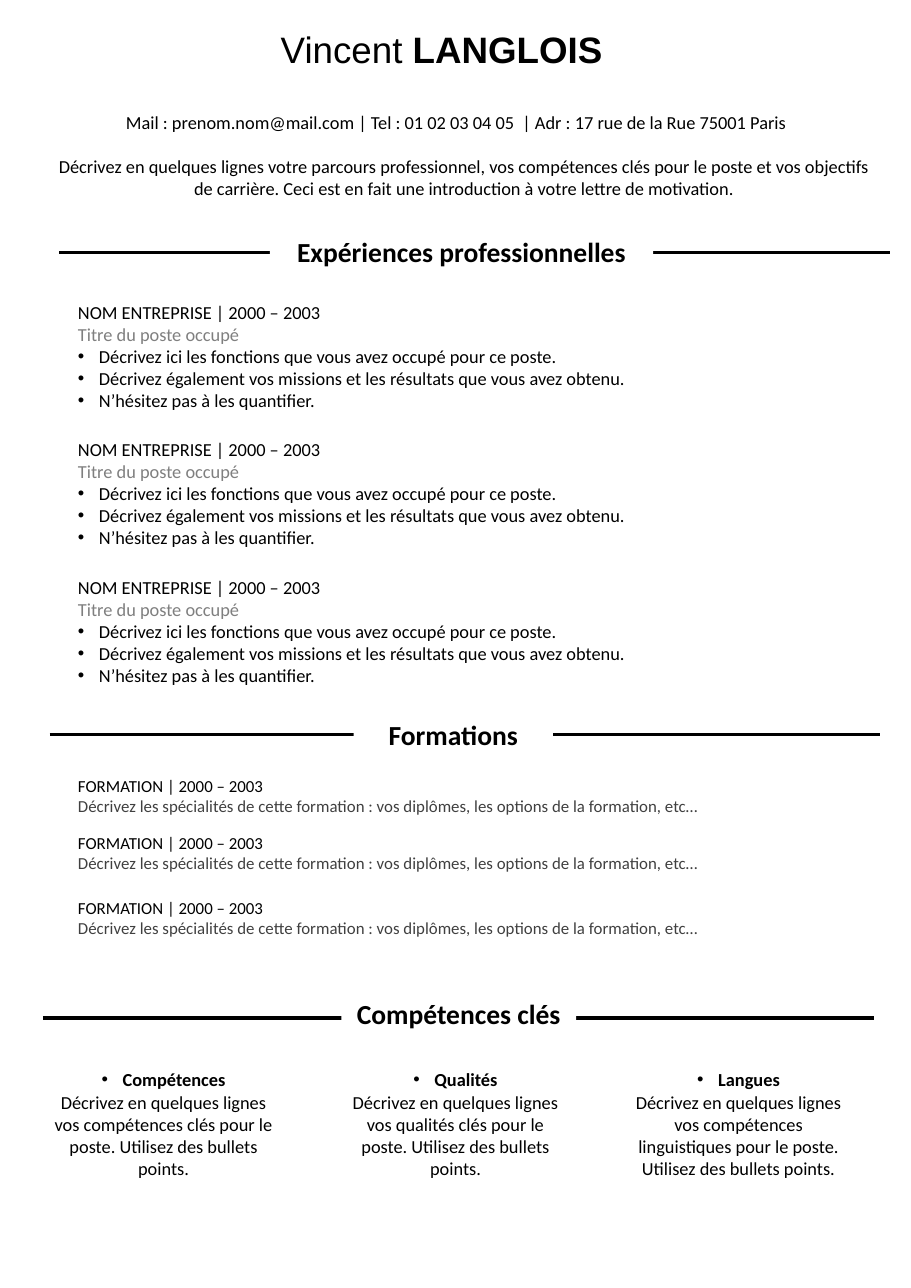
import pptx
import pptx.dml.color
import pptx.enum.shapes
import pptx.enum.text
import pptx.oxml
import pptx.oxml.ns
import pptx.util
from dataclasses import dataclass

PX = 9144  # 100 px to the inch
ALIGN = pptx.enum.text.PP_ALIGN
FIT = pptx.enum.text.MSO_AUTO_SIZE.SHAPE_TO_FIT_TEXT


@dataclass(frozen=True)
class Theme:
    ink: str = "000000"
    paper: str = "FFFFFF"
    grey: str = "7F7F7F"
    dark: str = "404040"
    body: str = "Calibri"
    head: str = "Arial"
    name: int = 24
    title: int = 18
    text: int = 12
    small: int = 11
    rule: int = 2
    indent: int = 19


T = Theme()


def px(n):
    return pptx.util.Emu(n * PX)


def rgb(code):
    return pptx.dml.color.RGBColor.from_string(code)


def add_run(para, text, size=T.text, color=T.ink, bold=False, face=T.body):
    run = para.add_run()
    run.text = text
    font = run.font
    font.name, font.size, font.bold = face, pptx.util.Pt(size), bold
    font.color.rgb = rgb(color)


def add_dot(para):
    props = para._p.get_or_add_pPr()
    props.set("marL", str(px(T.indent)))
    props.set("indent", str(-px(T.indent)))
    for tag, key, val in (("buFont", "typeface", T.head), ("buChar", "char", "•")):
        item = pptx.oxml.ns.qn("a:" + tag)
        props.append(props.makeelement(item, {key: val}))


def fill_text(frame, paras, align):
    """Each paragraph is (has bullet, list of (text, run options))."""
    for i, (dot, runs) in enumerate(paras):
        para = frame.add_paragraph() if i else frame.paragraphs[0]
        para.alignment = align
        if dot:
            add_dot(para)
        for text, opts in runs:
            add_run(para, text, **opts)


def add_text(slide, box, paras, align=ALIGN.LEFT, wrap=True):
    frame = slide.shapes.add_textbox(*map(px, box)).text_frame
    frame.word_wrap = wrap
    frame.auto_size = FIT
    fill_text(frame, paras, align)


def add_rule(slide, left, top):
    kind = pptx.enum.shapes.MSO_CONNECTOR.STRAIGHT
    line = slide.shapes.add_connector(kind, px(left), px(top), px(left + 754), px(top))
    line.line.color.rgb = rgb(T.ink)
    line.line.width = pptx.util.Pt(T.rule)
    props = line._element.spPr
    props.append(props.makeelement(pptx.oxml.ns.qn("a:effectLst"), {}))


def add_head(slide, text, rule, box):
    """Section title on a paper-coloured box that breaks its rule."""
    add_rule(slide, *rule)
    kind = pptx.enum.shapes.MSO_SHAPE.RECTANGLE
    shape = slide.shapes.add_shape(kind, *map(px, box))
    shape.shadow.inherit = False
    shape.fill.solid()
    shape.fill.fore_color.rgb = rgb(T.paper)
    shape.line.fill.background()
    shape.text_frame.word_wrap = True
    shape.text_frame.auto_size = FIT
    fill_text(shape.text_frame, [(False, [(text, {"size": T.title, "bold": True})])], ALIGN.CENTER)


def add_job(slide, top):
    tasks = (
        "Décrivez ici les fonctions que vous avez occupé pour ce poste.",
        "Décrivez également vos missions et les résultats que vous avez obtenu.",
        "N’hésitez pas à les quantifier.",
    )
    paras = [
        (False, [("NOM ENTREPRISE | 2000 – 2003", {})]),
        (False, [("Titre du poste occupé", {"color": T.grey})]),
    ]
    paras += [(True, [(task, {})]) for task in tasks]
    add_text(slide, (61, top, 700, 111), paras)


def add_course(slide, top):
    note = "Décrivez les spécialités de cette formation : vos diplômes, les options de la formation, etc…"
    add_text(slide, (61, top, 700, 47), [
        (False, [("FORMATION | 2000 – 2003", {"size": T.small})]),
        (False, [(note, {"size": T.small, "color": T.dark})]),
    ])


def add_skill(slide, left, title, topic):
    note = f"Décrivez en quelques lignes vos {topic} pour le poste. Utilisez des bullets points."
    add_text(slide, (left, 965, 219, 111), [
        (True, [(title, {"bold": True})]),
        (False, [(note, {})]),
    ], ALIGN.CENTER)


def main():
    deck = pptx.Presentation()
    deck.slide_width, deck.slide_height = px(827), px(1169)
    slide = deck.slides.add_slide(deck.slide_layouts[6])

    # Name, contact and introduction
    name = {"size": T.name, "face": T.head}
    add_text(slide, (245, 19, 315, 50), [
        (False, [("Vincent ", name), ("LANGLOIS", {**name, "bold": True})]),
    ], wrap=False)
    contact = "Mail : prenom.nom@mail.com | Tel : 01 02 03 04 05  | Adr : 17 rue de la Rue 75001 Paris"
    add_text(slide, (21, 96, 787, 30), [(False, [(contact, {})])], ALIGN.CENTER)
    intro = (
        "Décrivez en quelques lignes votre parcours professionnel, vos compétences clés "
        "pour le poste et vos objectifs de carrière. Ceci est en fait une introduction "
        "à votre lettre de motivation."
    )
    add_text(slide, (35, 136, 773, 50), [(False, [(intro, {})])], ALIGN.CENTER)

    # Work experience
    add_head(slide, "Expériences professionnelles", (54, 229), (245, 208, 348, 40))
    for i in range(3):
        add_job(slide, 268 + 125 * i)

    # Education
    add_head(slide, "Formations", (45, 667), (321, 647, 181, 40))
    for top in (699, 751, 810):
        add_course(slide, top)

    # Key skills
    add_head(slide, "Compétences clés", (39, 924), (310, 900, 213, 40))
    add_skill(slide, 39, "Compétences", "compétences clés")
    add_skill(slide, 304, "Qualités", "qualités clés")
    add_skill(slide, 561, "Langues", "compétences linguistiques")

    deck.save("out.pptx")


if __name__ == "__main__":
    main()
